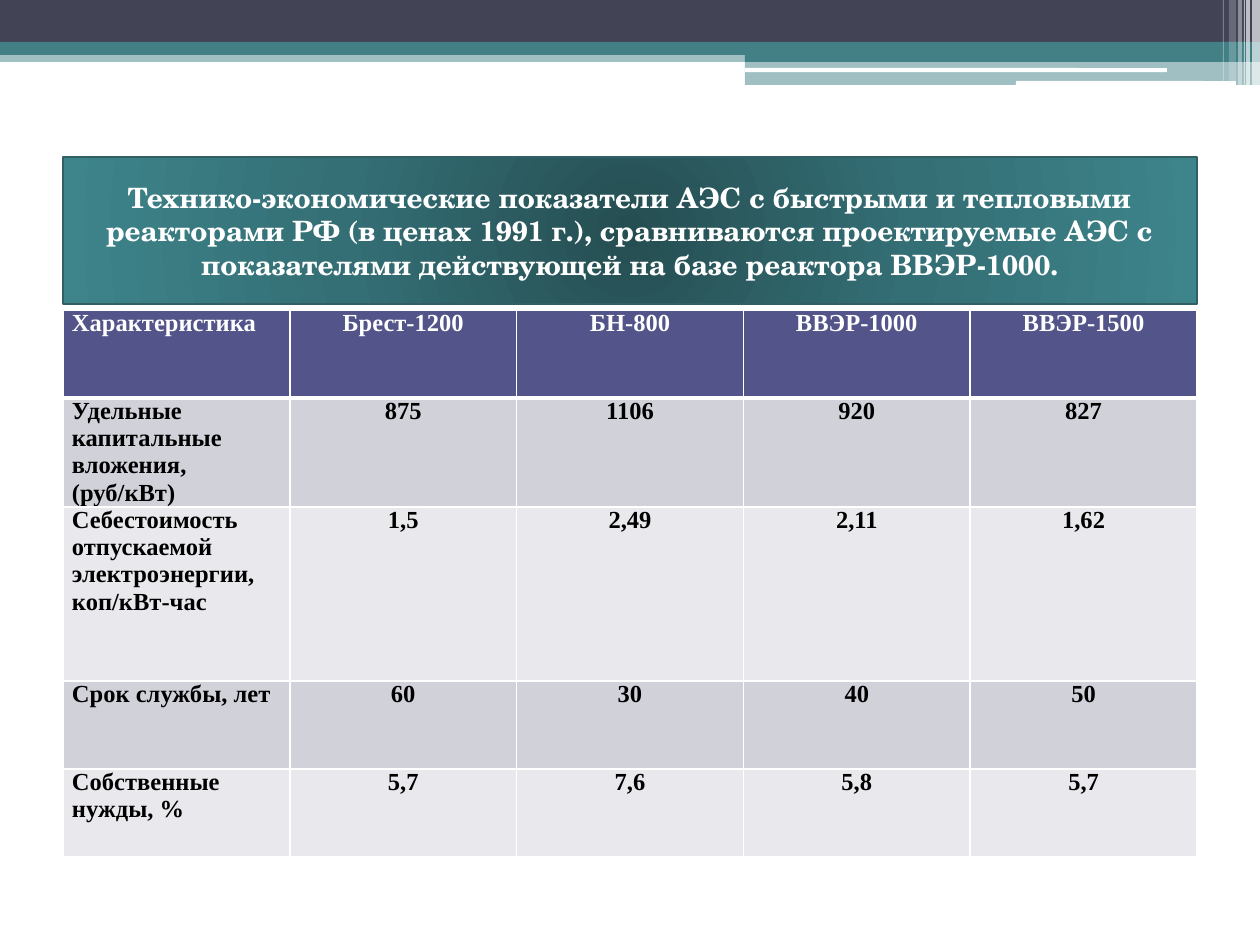
from lxml.etree import SubElement
from pptx import Presentation
from pptx.dml.color import RGBColor
from pptx.enum.shapes import MSO_SHAPE
from pptx.enum.text import MSO_ANCHOR, MSO_AUTO_SIZE, PP_ALIGN
from pptx.oxml.ns import qn
from pptx.util import Pt

PX = 914400 / 126
WHITE = RGBColor(0xFF, 0xFF, 0xFF)
BLACK = RGBColor(0, 0, 0)
SLATE = RGBColor(0x42, 0x44, 0x56)
TEAL = RGBColor(0x43, 0x80, 0x86)
EDGE = RGBColor(0x32, 0x5F, 0x63)
GLOW = [(0, RGBColor(0x25, 0x4E, 0x52)), (50, RGBColor(0x34, 0x6F, 0x75)),
        (100, RGBColor(0x3E, 0x84, 0x8B))]
HEAD = RGBColor(0x53, 0x54, 0x8A)
ROWS = [RGBColor(0xD1, 0xD1, 0xDA), RGBColor(0xE9, 0xE9, 0xED)]

TITLE = ("Технико-экономические показатели АЭС с быстрыми и тепловыми "
         "реакторами РФ (в ценах 1991 г.), сравниваются проектируемые АЭС с "
         "показателями действующей на базе реактора ВВЭР-1000.")
DATA = [
    ["Характеристика", "Брест-1200", "БН-800", "ВВЭР-1000", "ВВЭР-1500"],
    ["Удельные капитальные вложения, (руб/кВт)", "875", "1106", "920", "827"],
    ["Себестоимость отпускаемой электроэнергии, коп/кВт-час",
     "1,5", "2,49", "2,11", "1,62"],
    ["Срок службы, лет", "60", "30", "40", "50"],
    ["Собственные нужды, %", "5,7", "7,6", "5,8", "5,7"],
]
HEIGHTS = [88, 109, 174, 88, 88]


def emu(px):
    return round(px * PX)


def node(parent, tag, **attrs):
    return SubElement(parent, qn(tag), {k: str(v) for k, v in attrs.items()})


def bar(slide, x, y, w, h, color, alpha=100, kind=MSO_SHAPE.RECTANGLE):
    shape = slide.shapes.add_shape(kind, emu(x), emu(y), emu(w), emu(h))
    shape.shadow.inherit = False
    shape.fill.solid()
    shape.fill.fore_color.rgb = color
    shape.line.fill.background()
    if alpha < 100:
        tint = shape._element.spPr.find(qn("a:solidFill"))[0]
        node(tint, "a:alpha", val=alpha * 1000)


def banner(slide, x, y, w):
    """Draw the layered header bands with stripes at the right end."""
    bar(slide, x, y + 50, w, 12, TEAL, 50)
    bar(slide, x, y, w, 42, SLATE)
    bar(slide, x, y + 42, w, 13, TEAL)
    half, right = x + 745, x + w
    bar(slide, half, y + 49, right - half, 13, TEAL)
    bar(slide, half, y + 61, right - half, 24, TEAL, 50)
    for left, top, wide, high in [(745, 68, 422, 4), (1016, 81, 220, 5)]:
        bar(slide, x + left, y + top, wide, high, WHITE,
            kind=MSO_SHAPE.ROUNDED_RECTANGLE)
    for back, wide, high, alpha in [(8, 8, 85, 65), (14, 4, 85, 65),
                                    (16, 1, 85, 60), (22, 4, 85, 40),
                                    (31, 7, 81, 20), (37, 1, 81, 30)]:
        bar(slide, right - back, y, wide, high, WHITE, alpha)


def glow(shape):
    """Fill a shape with a gradient that spreads from its centre."""
    props = shape._element.spPr
    geom = props.find(qn("a:prstGeom"))
    if geom is None:
        geom = node(props, "a:prstGeom", prst="rect")
        node(geom, "a:avLst")
    grad = node(props, "a:gradFill", rotWithShape=1)
    stops = node(grad, "a:gsLst")
    for pos, color in GLOW:
        stop = node(stops, "a:gs", pos=pos * 1000)
        node(stop, "a:srgbClr", val=color)
    way = node(grad, "a:path", path="circle")
    node(way, "a:fillToRect", l=50000, t=50000, r=50000, b=50000)


def style(par, font, size, color, align):
    par.alignment = align
    for run in par.runs:
        run.font.name = font
        run.font.size = Pt(size)
        run.font.bold = True
        run.font.color.rgb = color


def heading(slide, x, y, w, h):
    title = slide.shapes.title
    title.left, title.top = emu(x), emu(y)
    title.width, title.height = emu(w), emu(h)
    glow(title)
    title.line.color.rgb = EDGE
    title.line.width = Pt(1.5)
    frame = title.text_frame
    frame.text = TITLE
    frame.word_wrap = True
    frame.auto_size = MSO_AUTO_SIZE.NONE
    frame.vertical_anchor = MSO_ANCHOR.MIDDLE
    style(frame.paragraphs[0], "TeX Gyre Schola", 16, WHITE, PP_ALIGN.CENTER)


def border(cell, row):
    """Rule a cell in white, thicker below the header row."""
    props = cell._tc.get_or_add_tcPr()
    for side in "LRTB":
        thick = (row, side) in [(0, "B"), (1, "T")]
        line = node(props, "a:ln" + side, w=Pt(3 if thick else 1))
        node(node(line, "a:solidFill"), "a:srgbClr", val=WHITE)


def grid(slide, x, y, w):
    cols = len(DATA[0])
    table = slide.shapes.add_table(len(DATA), cols, emu(x), emu(y), emu(w),
                                   emu(sum(HEIGHTS))).table
    for col in table.columns:
        col.width = emu(w / cols)
    for r, texts in enumerate(DATA):
        table.rows[r].height = emu(HEIGHTS[r])
        for c, text in enumerate(texts):
            cell = table.cell(r, c)
            cell.margin_left = cell.margin_right = emu(9)
            cell.margin_top = cell.margin_bottom = 0
            border(cell, r)
            cell.fill.solid()
            cell.fill.fore_color.rgb = ROWS[(r - 1) % 2] if r else HEAD
            cell.text_frame.text = text
            style(cell.text_frame.paragraphs[0], "Times New Roman", 14,
                  BLACK if r else WHITE,
                  PP_ALIGN.CENTER if c else PP_ALIGN.LEFT)


def main():
    deck = Presentation()
    deck.slide_width, deck.slide_height = emu(1260), emu(945)
    slide = deck.slides.add_slide(deck.slide_layouts[5])
    banner(slide, 0, 0, 1260)
    heading(slide, 63, 157, 1134, 147)
    grid(slide, 63, 310, 1134)
    deck.save("out.pptx")


if __name__ == "__main__":
    main()
